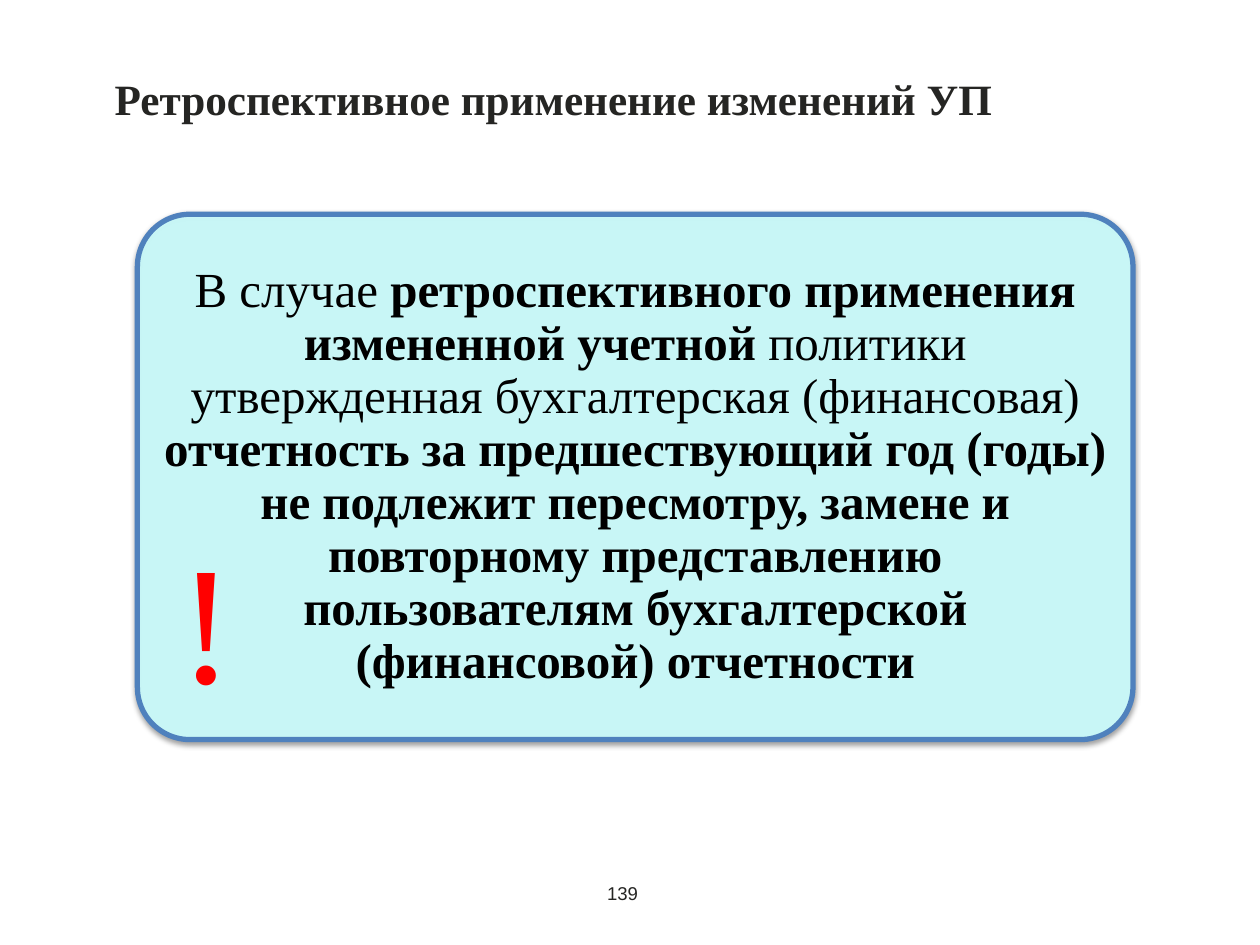
from lxml import etree
from pptx import Presentation
from pptx.dml.color import RGBColor
from pptx.enum import shapes, text
from pptx.oxml import ns
from pptx.util import Cm, Pt

SERIF = "Times New Roman"
DARK = "252523"


def color(value):
    return RGBColor.from_string(value)


def set_values(target, values):
    for name, value in values.items():
        setattr(target, name, value)


def add_text(slide, box, runs, font, frame=None, paragraph_format=None):
    shape = slide.shapes.add_textbox(*map(Cm, box))
    text_frame = shape.text_frame
    margins = {f"margin_{side}": 0 for side in ("left", "top", "right", "bottom")}
    set_values(text_frame, {"word_wrap": True, **margins, **(frame or {})})
    paragraph = text_frame.paragraphs[0]
    set_values(paragraph, paragraph_format or {})
    name, size, fill, *_ = font
    for content, bold in runs:
        run = paragraph.add_run()
        run.text = content
        set_values(run.font, {"name": name, "size": Pt(size), "bold": bold})
        run.font.color.rgb = color(fill)


def add_child(parent, tag, **attributes):
    return etree.SubElement(parent, ns.qn(tag), attributes)


def add_panel(slide, box):
    left, top, width, height = map(Cm, box)
    panel = slide.shapes.add_shape(
        shapes.MSO_SHAPE.ROUNDED_RECTANGLE, left, top, width, height)
    panel.adjustments[0] = 0.1
    panel.shadow.inherit = False
    panel.fill.solid()
    panel.fill.fore_color.rgb = color("CCFFFF")
    panel.line.color.rgb = color("4F81BD")
    panel.line.width = Pt(3)
    properties = panel.element.spPr
    fill = properties.find(f"{ns.qn('a:solidFill')}/{ns.qn('a:srgbClr')}")
    add_child(fill, "a:alpha", val="90000")
    shadow = add_child(
        properties.find(ns.qn("a:effectLst")), "a:outerShdw",
        blurRad=str(Pt(3.1)), dist=str(Pt(1.6)), dir="5400000", rotWithShape="0")
    shade = add_child(shadow, "a:srgbClr", val="000000")
    add_child(shade, "a:alpha", val="38000")


def add_title(slide, box):
    add_text(slide, box, [("Ретроспективное применение изменений УП", True)],
             (SERIF, 24.7, DARK))


def add_warning(slide, box):
    left, top, width, height = box
    inset = 0.31
    add_panel(slide, box)
    add_text(
        slide,
        (left + inset, top + inset, width - 2 * inset, height - 2 * inset),
        [
            ("В случае ", False),
            ("ретроспективного применения измененной учетной ", True),
            ("политики утвержденная бухгалтерская (финансовая) ", False),
            ("отчетность за предшествующий год (годы) не подлежит пересмотру, "
             "замене и повторному представлению пользователям бухгалтерской "
             "(финансовой) отчетности", True),
        ],
        (SERIF, 28, "000000"),
        {"vertical_anchor": text.MSO_ANCHOR.MIDDLE,
         "margin_left": Cm(0.15), "margin_right": Cm(0.15),
         "margin_top": Cm(0.1), "margin_bottom": Cm(0.1)},
        {"alignment": text.PP_ALIGN.CENTER, "line_spacing": 0.9},
    )
    add_text(slide, (left + 0.58, top + 5.94, 1.65, 4.37), [("!", False)],
             (SERIF, 96, "FF0000"),
             {"word_wrap": False, "margin_left": Cm(0.25), "margin_right": Cm(0.25),
              "margin_top": Cm(0.13), "margin_bottom": Cm(0.13)})


def add_page_number(slide, box):
    add_text(slide, box, [("139", False)], ("Arial", 10.6, DARK),
             {"margin_left": Cm(12.04)}, {"line_spacing": Pt(11.6)})


def main():
    presentation = Presentation()
    set_values(presentation, {"slide_width": Cm(25.4), "slide_height": Cm(19.05)})
    slide = presentation.slides.add_slide(presentation.slide_layouts[6])
    add_title(slide, (2.31, 1.45, 21.92, 1.07))
    add_warning(slide, (2.77, 4.32, 20.07, 10.59))
    add_page_number(slide, (0.2, 17.81, 13.11, 0.43))
    presentation.save("out.pptx")


if __name__ == "__main__":
    main()
